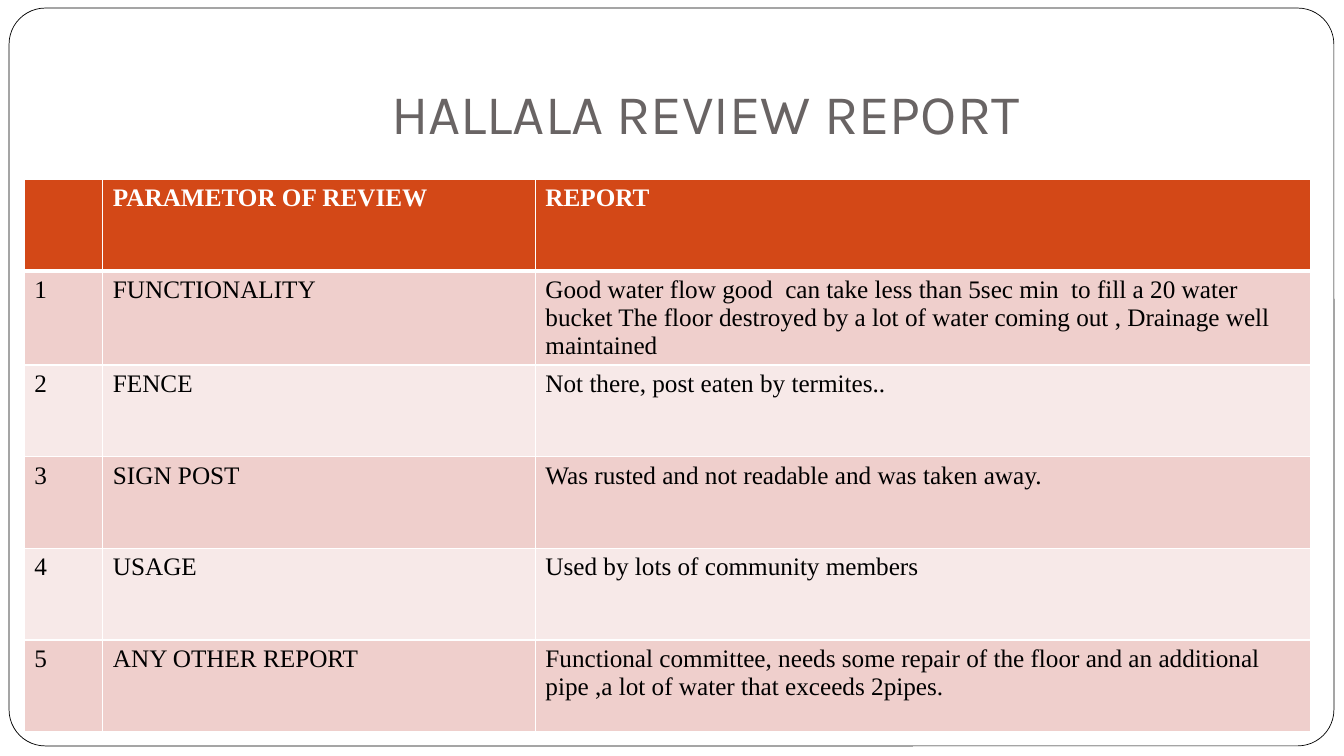
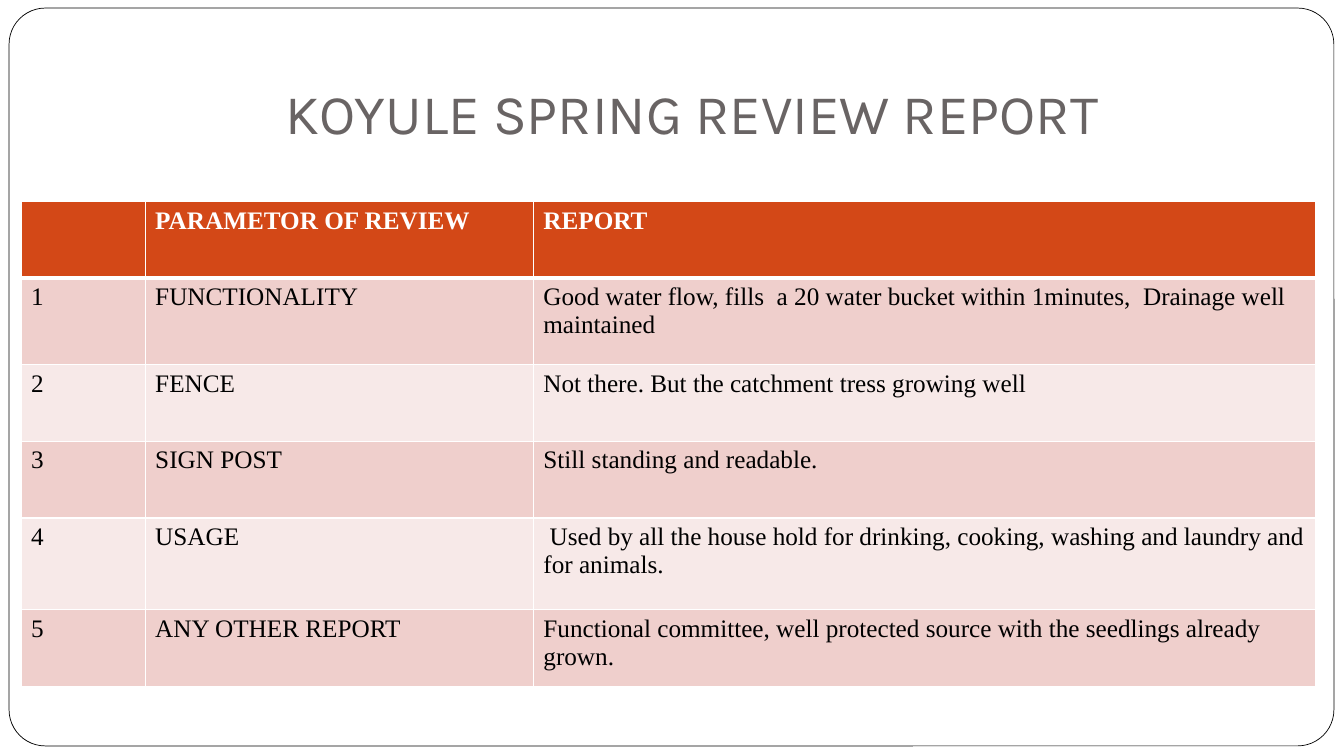
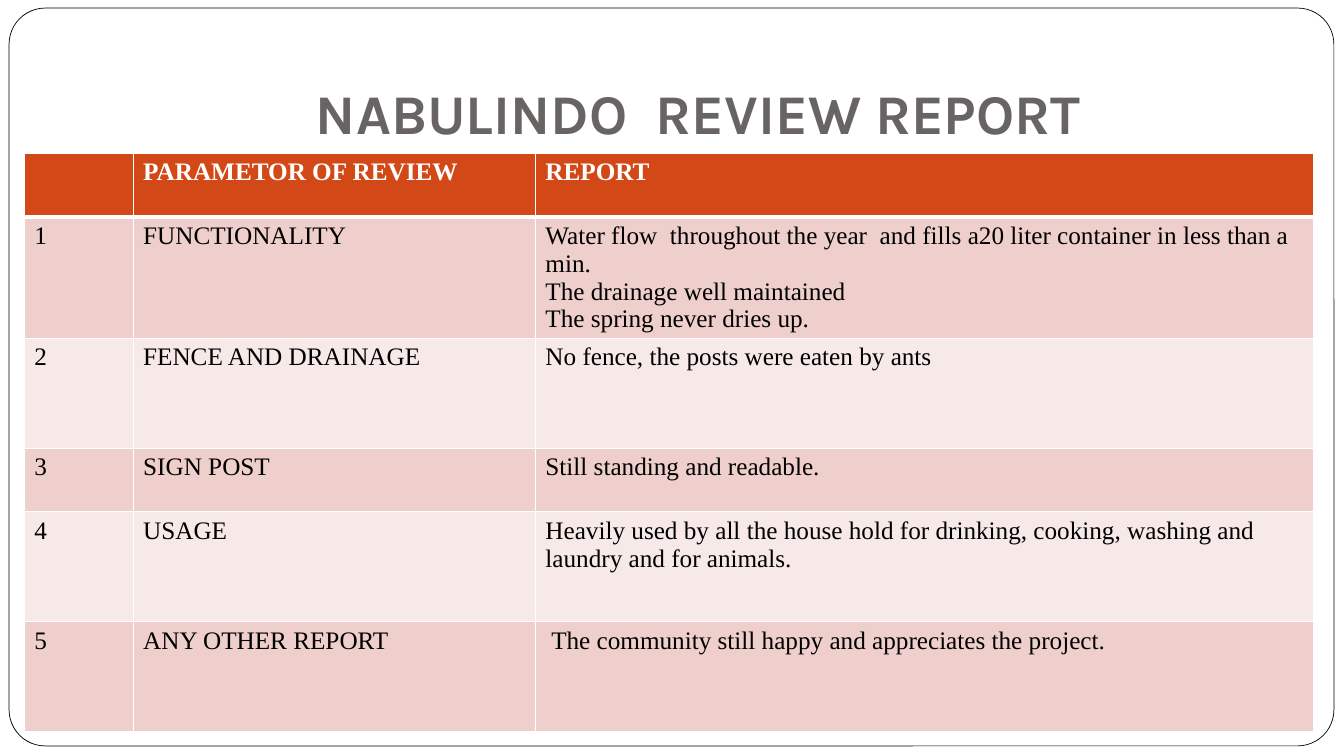
from dataclasses import dataclass

from lxml.etree import SubElement
from pptx import Presentation
from pptx.dml.color import RGBColor
from pptx.enum.shapes import MSO_SHAPE
from pptx.enum.text import MSO_ANCHOR, MSO_AUTO_SIZE, PP_ALIGN
from pptx.oxml.ns import qn
from pptx.util import Pt

EMU_PER_PX = 9144  # 100 px to the inch
SLIDE_SIZE = (1333, 750)
FRAME_BOX = (9, 8, 1314, 732)
TITLE_BOX = (133, 30, 1133, 125)
TITLE_ONLY_LAYOUT = 5


@dataclass(frozen=True)
class Theme:
    white: str = "FFFFFF"
    black: str = "000000"
    title: str = "696464"
    header: str = "D34817"
    bands: tuple = ("EFCFCC", "F7E9E8")
    title_font: str = "Karla"
    table_font: str = "Times New Roman"
    title_size: int = 40
    table_size: int = 18
    frame_line: float = 0.5
    cell_line: int = 1
    header_line: int = 3


THEME = Theme()
HEADINGS = ("", "PARAMETOR OF REVIEW", "REPORT")


@dataclass(frozen=True)
class Review:
    title: str
    left: int
    top: int
    columns: tuple
    rows: tuple
    findings: tuple
    bold_title: bool = False


REVIEWS = (
    Review(
        "HALLALA REVIEW REPORT", 24, 178, (78, 429, 769), (91,) * 6,
        (
            ("FUNCTIONALITY",
             "Good water flow good  can take less than 5sec min  to fill a 20 water bucket "
             "The floor destroyed by a lot of water coming out , Drainage well maintained"),
            ("FENCE", "Not there, post eaten by termites.."),
            ("SIGN POST", "Was rusted and not readable and was taken away."),
            ("USAGE", "Used by lots of community members"),
            ("ANY OTHER REPORT",
             "Functional committee, needs some repair of the floor and an additional pipe ,"
             "a lot of water that exceeds 2pipes."),
        ),
    ),
    Review(
        "KOYULE SPRING REVIEW REPORT  ", 21, 200, (123, 385, 776), (76, 86, 76, 76, 91, 76),
        (
            ("FUNCTIONALITY",
             "Good water flow, fills  a 20 water bucket within 1minutes,  Drainage well maintained"),
            ("FENCE", "Not there. But the catchment tress growing well"),
            ("SIGN POST", "Still standing and readable."),
            ("USAGE",
             " Used by all the house hold for drinking, cooking, washing and laundry "
             "and for animals."),
            ("ANY OTHER REPORT",
             "Functional committee, well protected source with the seedlings already grown."),
        ),
    ),
    Review(
        "NABULINDO  REVIEW REPORT ", 24, 152, (108, 399, 772), (63, 109, 109, 63, 109, 109),
        (
            ("FUNCTIONALITY",
             "Water flow  throughout the year  and fills a20 liter container in less than a min.\n"
             "The drainage well maintained\n"
             "The spring never dries up."),
            ("FENCE AND DRAINAGE", "No fence, the posts were eaten by ants"),
            ("SIGN POST", "Still standing and readable."),
            ("USAGE",
             "Heavily used by all the house hold for drinking, cooking, washing and laundry "
             "and for animals."),
            ("ANY OTHER REPORT", " The community still happy and appreciates the project."),
        ),
        bold_title=True,
    ),
)


def px(length):
    return length * EMU_PER_PX


def rgb(value):
    return RGBColor.from_string(value)


def format_text(text_frame, font_name, size, color, bold):
    for paragraph in text_frame.paragraphs:
        font = paragraph.font
        for target in (font, *(run.font for run in paragraph.runs)):
            target.name = font_name
            target.size = Pt(size)
            target.bold = bold
            target.color.rgb = rgb(color)


def add_master_frame(prs, slide):
    """Draw the rounded frame, then move it behind everything on the master."""
    frame = slide.shapes.add_shape(MSO_SHAPE.ROUNDED_RECTANGLE, *map(px, FRAME_BOX))
    frame.adjustments[0] = 0.049
    frame.shadow.inherit = False
    frame.fill.solid()
    frame.fill.fore_color.rgb = rgb(THEME.white)
    frame.line.color.rgb = rgb(THEME.black)
    frame.line.width = Pt(THEME.frame_line)
    master_tree = prs.slide_master.shapes._spTree
    ids = [int(shape.shape_id) for shape in prs.slide_master.shapes]
    frame._element.nvSpPr.cNvPr.set("id", str(max(ids) + 1))
    master_tree.insert(2, frame._element)


def set_title(slide, text, bold):
    title = slide.shapes.title
    title.left, title.top, title.width, title.height = map(px, TITLE_BOX)
    frame = title.text_frame
    frame.text = text
    frame.word_wrap = True
    frame.auto_size = MSO_AUTO_SIZE.NONE
    frame.vertical_anchor = MSO_ANCHOR.BOTTOM
    frame.margin_left = frame.margin_right = frame.margin_bottom = px(10)
    frame.margin_top = px(5)
    frame.paragraphs[0].alignment = PP_ALIGN.CENTER
    format_text(frame, THEME.title_font, THEME.title_size, THEME.title, bold)


def set_borders(cell, top, bottom):
    """Give the cell white edges; call before filling, as the schema orders it."""
    properties = cell._tc.get_or_add_tcPr()
    widths = {"L": THEME.cell_line, "R": THEME.cell_line, "T": top, "B": bottom}
    for side, width in widths.items():
        line = SubElement(properties, qn(f"a:ln{side}"), w=str(Pt(width)))
        fill = SubElement(line, qn("a:solidFill"))
        SubElement(fill, qn("a:srgbClr"), val=THEME.white)


def fill_cell(cell, text, row):
    is_header = row == 0
    set_borders(
        cell,
        top=THEME.header_line if row == 1 else THEME.cell_line,
        bottom=THEME.header_line if is_header else THEME.cell_line,
    )
    cell.fill.solid()
    cell.fill.fore_color.rgb = rgb(THEME.header if is_header else THEME.bands[(row - 1) % 2])
    cell.text_frame.text = text
    color = THEME.white if is_header else THEME.black
    format_text(cell.text_frame, THEME.table_font, THEME.table_size, color, is_header)


def add_review_table(slide, review):
    numbered = [(str(number), *finding) for number, finding in enumerate(review.findings, 1)]
    records = [HEADINGS, *numbered]
    box = (review.left, review.top, sum(review.columns), sum(review.rows))
    table = slide.shapes.add_table(len(records), len(HEADINGS), *map(px, box)).table
    table.horz_banding = False
    for column, width in zip(table.columns, review.columns):
        column.width = px(width)
    for row, (record, height) in enumerate(zip(records, review.rows)):
        table.rows[row].height = px(height)
        for column, text in enumerate(record):
            fill_cell(table.cell(row, column), text, row)


def main():
    prs = Presentation()
    prs.slide_width, prs.slide_height = map(px, SLIDE_SIZE)
    layout = prs.slide_layouts[TITLE_ONLY_LAYOUT]
    for review in REVIEWS:
        slide = prs.slides.add_slide(layout)
        set_title(slide, review.title, review.bold_title)
        add_review_table(slide, review)
    add_master_frame(prs, prs.slides[0])
    prs.save("out.pptx")


if __name__ == "__main__":
    main()
